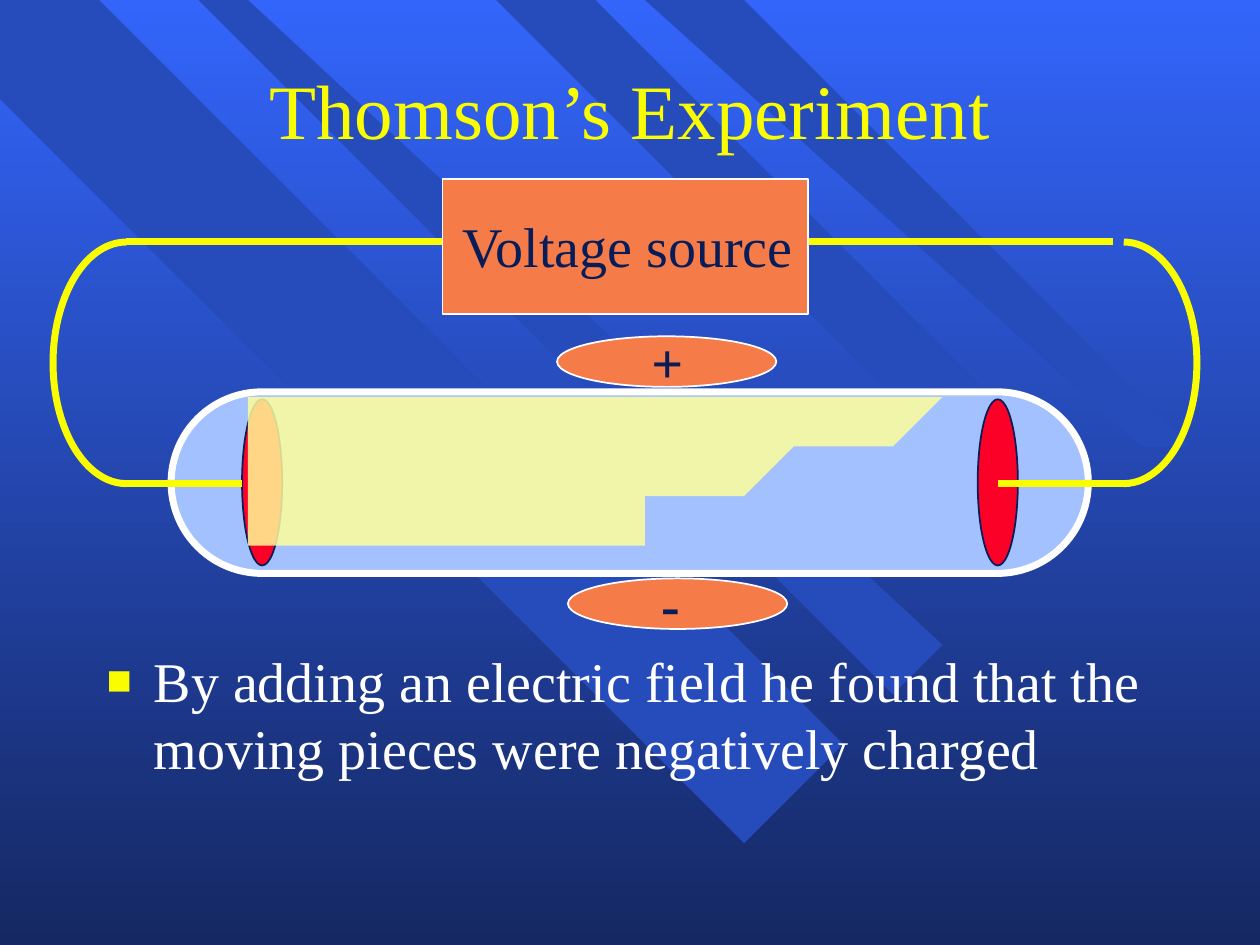
from dataclasses import dataclass

from lxml.etree import SubElement
from pptx import Presentation
from pptx.dml.color import RGBColor
from pptx.enum.shapes import MSO_CONNECTOR as Link, MSO_SHAPE as Preset
from pptx.enum.text import MSO_ANCHOR as Anchor, MSO_AUTO_SIZE as AutoSize, PP_ALIGN as Align
from pptx.oxml.ns import qn
from pptx.util import Cm, Pt


@dataclass(frozen=True)
class Theme:
    font: str = "Times New Roman"
    title_size: float = 44
    text_size: float = 32
    sky: str = "3365FB"
    night: str = "152863"
    band: str = "264CBC"
    glass: str = "A2C1FE"
    white: str = "FFFFFF"
    red: str = "FC0128"
    navy: str = "081D58"
    yellow: str = "FAFD00"
    orange: str = "F57B49"
    beam: str = "FFFF99"
    thick: float = 4
    thin: float = 1


THEME = Theme()
BANDS = [
    [(17.02, 15.06), (2.01, 0), (0, 0), (0, 2.13), (14.96, 17.14)],
    [(5.44, 0), (18.75, 13.39), (17.93, 14.2), (3.78, 0)],
    [(12.42, 0), (22.25, 9.88), (20.85, 11.28), (9.65, 0)],
    [(13.46, 0), (22.78, 9.35), (23.55, 8.59), (15.01, 0)],
]
BEAM_START = (5.28, 8.46)
BEAM_CURVES = [
    [(5.28, 8.46), (4.32, 10.59), (5.28, 11)],
    [(6.2, 10.97), (9.88, 11.02), (11.05, 11)],
    [(12.14, 10.87), (12.55, 10.67), (14.02, 10.16)],
    [(15.49, 9.65), (19.05, 8.31), (19.89, 7.95)],
    [(18.95, 8), (19.38, 7.98), (19.08, 7.98)],
    [(17.83, 7.96), (16.57, 7.94), (15.32, 7.92)],
    [(14.15, 7.98), (13.23, 8.28), (12.19, 8.38)],
    [(10.97, 8.46), (10.29, 8.46), (9.12, 8.46)],
    [(7.98, 8.48), (6.1, 8.46), (5.28, 8.46)],
]


def apply_format(target, values):
    for name, value in values.items():
        setattr(target, name, value)


def paint(shape, fill=None, line=None, width=THEME.thin):
    shape.shadow.inherit = False
    if fill:
        shape.fill.solid()
        shape.fill.fore_color.rgb = RGBColor.from_string(fill)
    else:
        shape.fill.background()
    if line:
        shape.line.color.rgb = RGBColor.from_string(line)
        shape.line.width = Pt(width)
    else:
        shape.line.fill.background()


def paint_background(slide):
    fill = slide.background.fill
    fill.gradient()
    fill.gradient_angle = 270
    for stop, color in zip(fill.gradient_stops, (THEME.sky, THEME.night)):
        stop.color.rgb = RGBColor.from_string(color)


def add_preset(slide, preset, box, fill=None, line=None, width=THEME.thin):
    shape = slide.shapes.add_shape(preset, *map(Cm, box))
    paint(shape, fill, line, width)
    return shape


def add_outline(slide, points, fill):
    builder = slide.shapes.build_freeform(*points[0], scale=Cm(1))
    builder.add_line_segments(points[1:], close=True)
    outline = builder.convert_to_shape()
    paint(outline, fill)
    return outline


def curve_points(start, curves, steps=16):
    points = [start]
    for first, second, end in curves:
        corners = list(zip(points[-1], first, second, end))
        for step in range(1, steps + 1):
            t = step / steps
            u = 1 - t
            points.append(tuple(
                a * u**3 + 3 * b * u**2 * t + 3 * c * u * t**2 + d * t**3
                for a, b, c, d in corners
            ))
    return points


def add_beam(slide):
    beam = add_outline(slide, curve_points(BEAM_START, BEAM_CURVES), THEME.beam)
    color = beam.element.spPr.find(qn("a:solidFill"))[0]
    SubElement(color, qn("a:alpha"), val="84000")


def add_wire(slide, left, right, y):
    wire = slide.shapes.add_connector(Link.STRAIGHT, Cm(left), Cm(y), Cm(right), Cm(y))
    wire.line.color.rgb = RGBColor.from_string(THEME.yellow)
    wire.line.width = Pt(THEME.thick)
    SubElement(wire.element.spPr, qn("a:effectLst"))


def add_wire_bend(slide, left, start, end):
    bend = add_preset(slide, Preset.ARC, (left, 4.88, 2.95, 4.87),
                      line=THEME.yellow, width=THEME.thick)
    for index, degrees in enumerate((start, end)):
        bend.adjustments[index] = degrees * 0.6


def write(holder, text, color, size=THEME.text_size, bold=False, align=Align.LEFT,
          anchor=Anchor.TOP, wrap=True):
    apply_format(holder.text_frame, {
        "text": text, "word_wrap": wrap, "auto_size": AutoSize.NONE,
        "vertical_anchor": anchor,
        "margin_left": Cm(0.25), "margin_right": Cm(0.25),
        "margin_top": Cm(0.13), "margin_bottom": Cm(0.13),
    })
    paragraph = holder.text_frame.paragraphs[0]
    paragraph.alignment = align
    font = paragraph.runs[0].font
    apply_format(font, {"name": THEME.font, "size": Pt(size), "bold": bold})
    font.color.rgb = RGBColor.from_string(color)
    return paragraph


def add_label(slide, text, box, bold=False):
    label = slide.shapes.add_textbox(*map(Cm, box))
    write(label, text, THEME.navy, bold=bold, wrap=False)


def place_in_front(slide, placeholder, box):
    apply_format(placeholder, dict(zip(("left", "top", "width", "height"), map(Cm, box))))
    slide.shapes.element.append(placeholder.element)


def add_bullet(paragraph):
    paragraph.space_before = Pt(0.2 * THEME.text_size)
    properties = paragraph._p.get_or_add_pPr()
    properties.set("marL", str(Cm(0.95)))
    properties.set("indent", str(-Cm(0.95)))
    SubElement(SubElement(properties, qn("a:buClr")), qn("a:srgbClr"), val=THEME.yellow)
    SubElement(properties, qn("a:buSzPct"), val="75000")
    SubElement(properties, qn("a:buFont"), typeface=THEME.font)
    SubElement(properties, qn("a:buChar"), char="■")


def add_circuit(slide):
    tube = add_preset(slide, Preset.ROUNDED_RECTANGLE, (3.45, 7.9, 18.49, 3.66),
                      THEME.glass, THEME.white, THEME.thick)
    tube.adjustments[0] = 0.5
    for left in (4.88, 19.71):
        add_preset(slide, Preset.OVAL, (left, 8.05, 0.81, 3.35), THEME.red, THEME.navy)
    for left, right, y in ((2.54, 4.88, 9.74), (20.12, 22.66, 9.74), (2.54, 22.43, 4.87)):
        add_wire(slide, left, right, y)
    add_wire_bend(slide, 1.07, 90, 270)
    add_wire_bend(slide, 21.18, 270, 90)
    add_preset(slide, Preset.RECTANGLE, (8.92, 3.61, 7.37, 2.72), THEME.orange, THEME.white)
    add_label(slide, "Voltage source", (9.07, 4.14, 7.32, 1.6))


def add_plate(slide, sign, left, top, sign_left, sign_width):
    add_preset(slide, Preset.OVAL, (left, top, 4.42, 1.02), THEME.orange, THEME.white)
    add_label(slide, sign, (sign_left, top - 0.3, sign_width, 1.6), bold=True)


def main():
    deck = Presentation()
    deck.slide_width, deck.slide_height = Cm(25.4), Cm(19.05)
    slide = deck.slides.add_slide(deck.slide_layouts[1])
    title, body = slide.placeholders
    paint_background(slide)
    for band in BANDS:
        add_outline(slide, band, THEME.band)
    add_circuit(slide)
    place_in_front(slide, title, (1.65, 1.14, 22.1, 2.11))
    write(title, "Thomson’s Experiment", THEME.yellow, THEME.title_size,
          align=Align.CENTER, anchor=Anchor.MIDDLE)
    place_in_front(slide, body, (1.9, 12.9, 21.6, 3.6))
    add_bullet(write(body, "By adding an electric field he found that the moving pieces "
                           "were negatively charged", THEME.white))
    add_plate(slide, "+", 11.23, 6.78, 12.88, 1.14)
    add_plate(slide, "-", 11.45, 11.66, 13.08, 0.89)
    add_beam(slide)
    deck.save("out.pptx")


if __name__ == "__main__":
    main()
